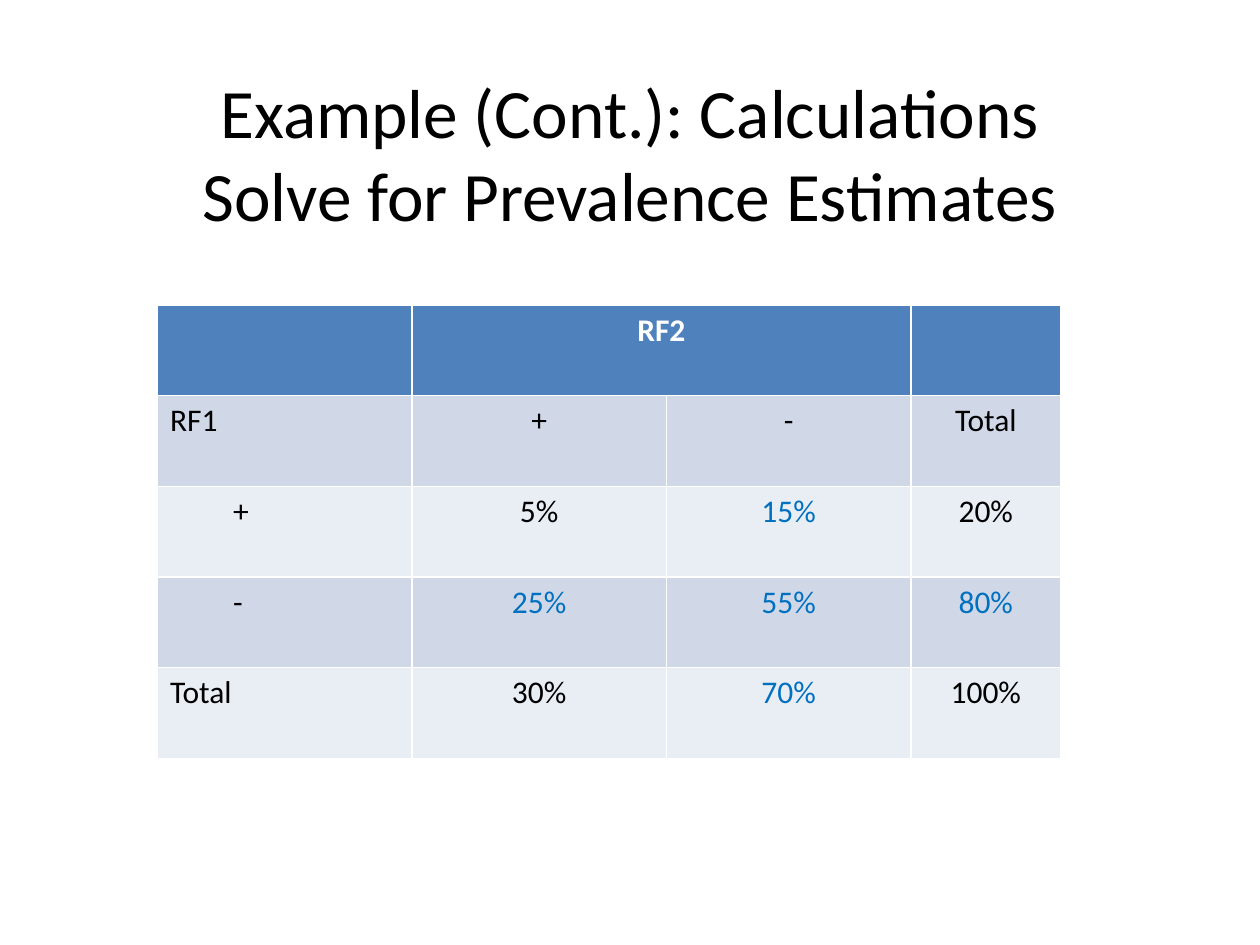
from pptx import Presentation
from pptx.dml.color import RGBColor
from pptx.enum.text import MSO_ANCHOR, PP_ALIGN
from pptx.util import Inches, Pt

BLACK = RGBColor(0x00, 0x00, 0x00)
WHITE = RGBColor(0xFF, 0xFF, 0xFF)
BLUE = RGBColor(0x00, 0x70, 0xC0)
HEADER = RGBColor(0x4F, 0x81, 0xBD)
BANDS = [RGBColor(0xE9, 0xED, 0xF4), RGBColor(0xD0, 0xD8, 0xE8)]
FONT = "Calibri"

TITLE = ["Example (Cont.): Calculations", "Solve for Prevalence Estimates"]
ROWS = [
    ["", "RF2", "", ""],
    ["RF1", "+", "-", "Total"],
    ["\t+", "5%", "15%", "20%"],
    ["\t-", "25%", "55%", "80%"],
    ["Total", "30%", "70%", "100%"],
]
SOLVED = {"15%", "25%", "55%", "80%", "70%"}
COL_WIDTHS = [2.02, 2.02, 1.94, 1.19]
ROW_HEIGHT = 0.72


def add_run(p, text, size, color, bold=False):
    r = p.add_run()
    r.text = text
    r.font.name = FONT
    r.font.size = Pt(size)
    r.font.bold = bold
    r.font.color.rgb = color


prs = Presentation()
prs.slide_width, prs.slide_height = Inches(10), Inches(7.5)
slide = prs.slides.add_slide(prs.slide_layouts[6])

title = slide.shapes.add_textbox(Inches(0.5), Inches(0.58), Inches(9), Inches(1.25))
tf = title.text_frame
tf.word_wrap = True
tf.vertical_anchor = MSO_ANCHOR.MIDDLE
p = tf.paragraphs[0]
p.alignment = PP_ALIGN.CENTER
for i, line in enumerate(TITLE):
    if i:
        p.add_line_break()
    add_run(p, line, 39.6, BLACK)

# The default table style supplies the white rules and the thick header rule.
table = slide.shapes.add_table(
    len(ROWS), len(COL_WIDTHS), Inches(1.25), Inches(2.42),
    Inches(sum(COL_WIDTHS)), Inches(ROW_HEIGHT * len(ROWS))).table
for col, width in zip(table.columns, COL_WIDTHS):
    col.width = Inches(width)
table.cell(0, 1).merge(table.cell(0, 2))

for i, row in enumerate(ROWS):
    table.rows[i].height = Inches(ROW_HEIGHT)
    for j, text in enumerate(row):
        cell = table.cell(i, j)
        cell.fill.solid()
        cell.fill.fore_color.rgb = BANDS[i % 2] if i else HEADER
        if not text:
            continue
        p = cell.text_frame.paragraphs[0]
        p.alignment = PP_ALIGN.CENTER if j else PP_ALIGN.LEFT
        color = WHITE if i == 0 else BLUE if text in SOLVED else BLACK
        add_run(p, text, 18, color, bold=i == 0)

prs.save("out.pptx")
